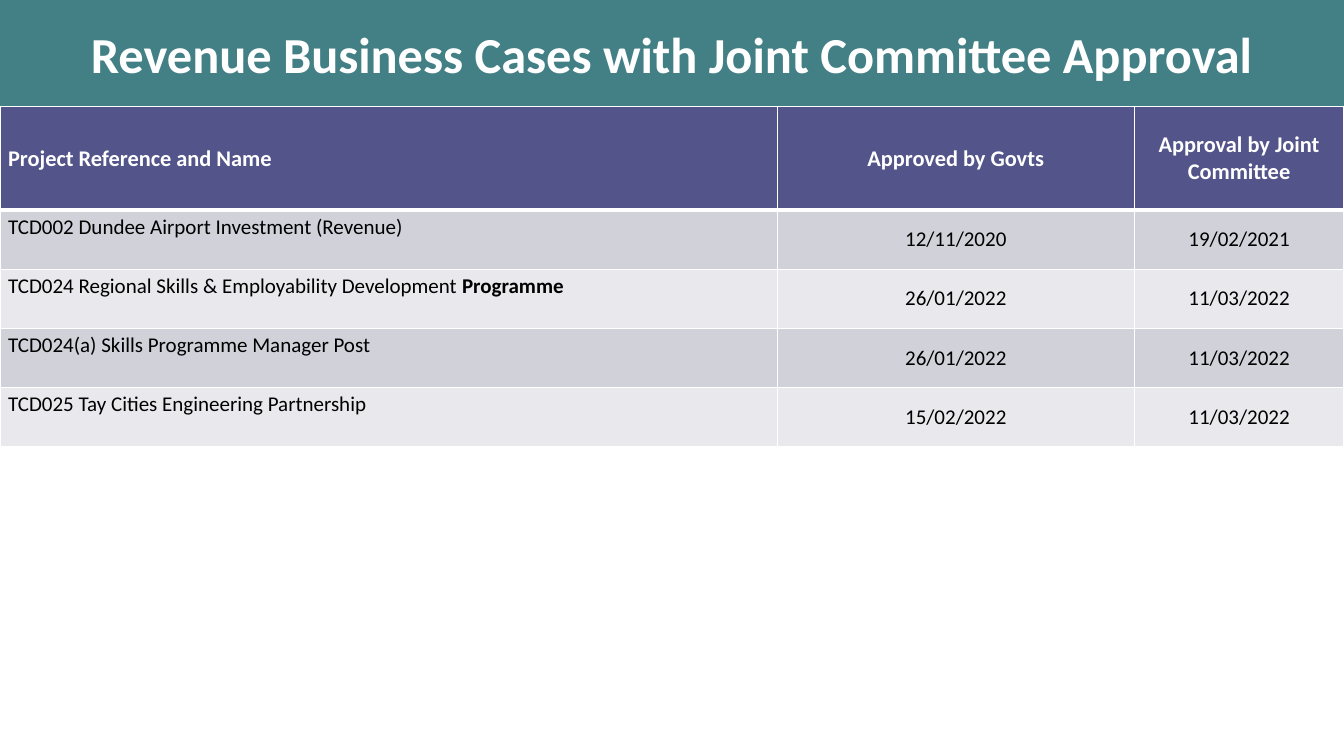
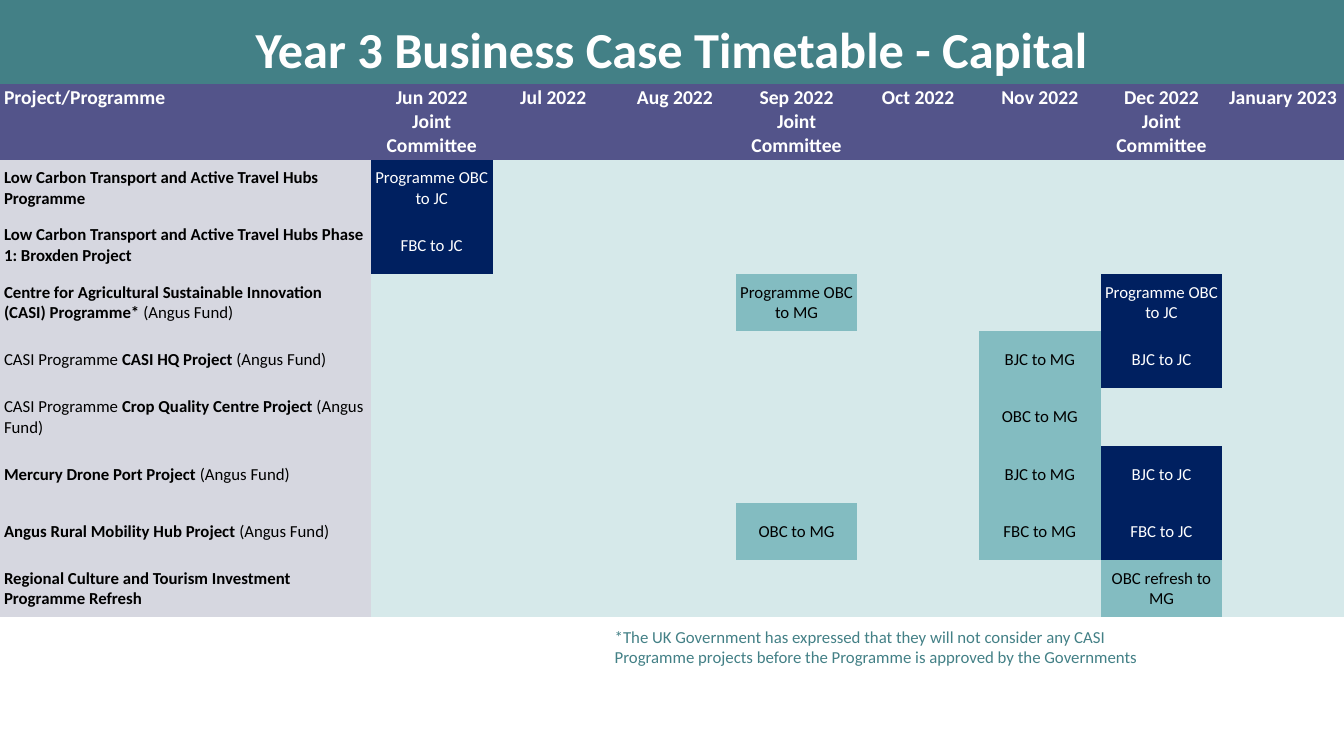
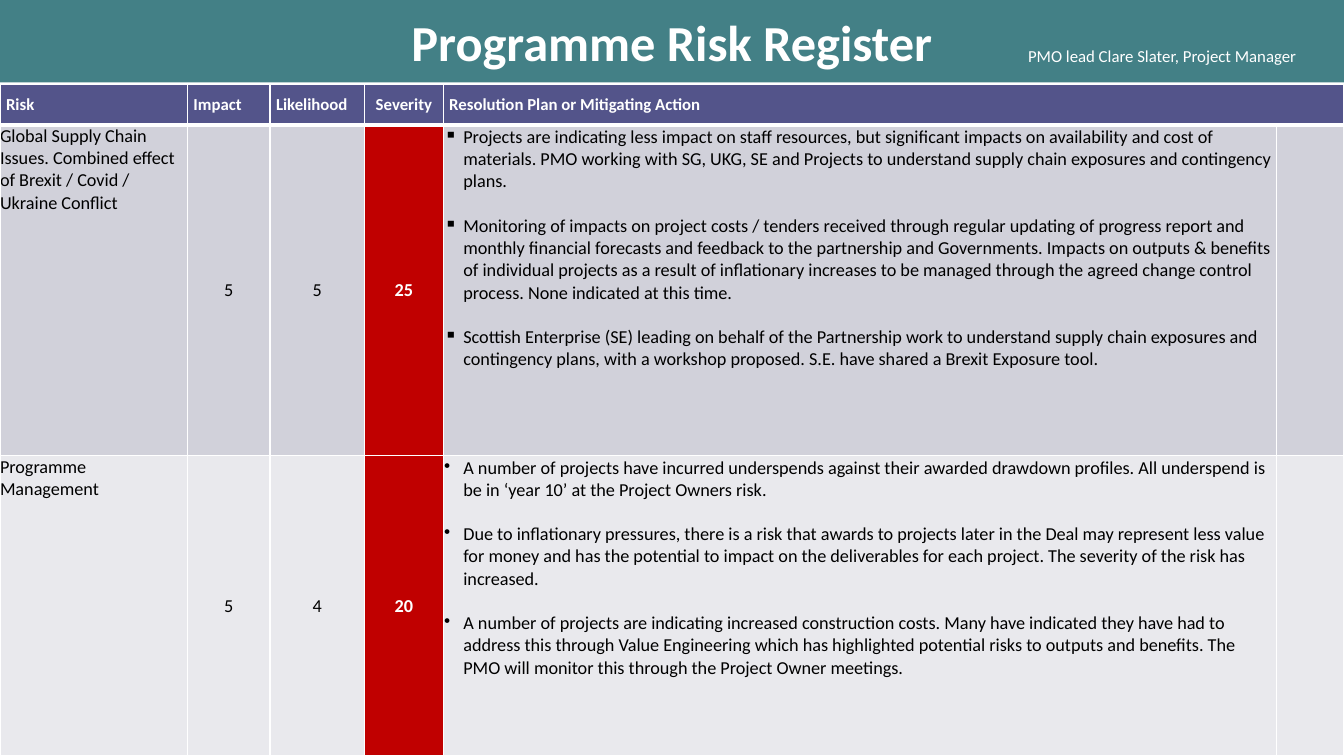
from dataclasses import dataclass, replace
from typing import Optional

from lxml.etree import SubElement
from pptx import Presentation
from pptx.dml.color import RGBColor
from pptx.enum.text import MSO_ANCHOR, MSO_AUTO_SIZE, PP_ALIGN
from pptx.oxml.ns import qn
from pptx.util import Emu, Inches, Pt


@dataclass(frozen=True)
class Theme:
    font: str = "Calibri"
    white: str = "FFFFFF"
    black: str = "000000"
    teal: str = "438086"
    violet: str = "53548A"
    bands: tuple = ("D1D1DA", "E9E9ED")
    label: str = "D6D7E0"
    pale: str = "D6E9EA"
    mint: str = "83BCC1"
    navy: str = "002060"
    red: str = "C00000"
    title: int = 36
    large: int = 16
    text: int = 15
    head: int = 14
    body: int = 13
    small: int = 12


@dataclass(frozen=True)
class Cell:
    """One table cell; a bar in its text switches bold on or off."""
    text: tuple = ()
    fill: str = ""
    color: str = "000000"
    size: int = 12
    bold: bool = False
    align: PP_ALIGN = PP_ALIGN.LEFT
    anchor: MSO_ANCHOR = MSO_ANCHOR.MIDDLE
    inset: tuple = (0.04, 0.02)
    bullet: str = ""
    span: int = 1


@dataclass(frozen=True)
class Grid:
    """A table of full slide width; cols and rows are relative sizes."""
    top: float
    height: float
    cols: tuple
    rows: tuple
    cells: list
    line: float = 0
    rule: float = 0


T = Theme()
MID = PP_ALIGN.CENTER
COLS, ROWS = 160, 90  # slide grid

deck = Presentation()
deck.slide_width, deck.slide_height = Inches(13.33), Inches(7.5)


def wide(cols: float) -> Emu:
    return Emu(int(deck.slide_width * cols / COLS))


def high(rows: float) -> Emu:
    return Emu(int(deck.slide_height * rows / ROWS))


def rgb(color: str) -> RGBColor:
    return RGBColor.from_string(color)


# Text
def write(para, text: str, size: int, color: str, bold: bool = False) -> None:
    for i, part in enumerate(text.split("|")):
        if part:
            run = para.add_run()
            run.text = part
            font = run.font
            font.name, font.size = T.font, Pt(size)
            font.bold = bold or i % 2 == 1
            font.color.rgb = rgb(color)


def bullet(para, mark: str) -> None:
    props = para._p.get_or_add_pPr()
    props.set("marL", str(Inches(0.19)))
    props.set("indent", str(-Inches(0.19)))
    SubElement(props, qn("a:buChar")).set("char", mark)


def note(slide, box: tuple, text: str, color: str) -> None:
    left, top, width, height = box
    shape = slide.shapes.add_textbox(wide(left), high(top), wide(width), high(height))
    shape.text_frame.word_wrap = True
    write(shape.text_frame.paragraphs[0], text, T.small, color)


# Slide with its title band
def page(title: str, height: float):
    slide = deck.slides.add_slide(deck.slide_layouts[5])
    band = slide.shapes.title
    band.left, band.top = Emu(0), Emu(0)
    band.width, band.height = wide(COLS), high(height)
    band.fill.solid()
    band.fill.fore_color.rgb = rgb(T.teal)
    frame = band.text_frame
    frame.auto_size = MSO_AUTO_SIZE.NONE
    frame.vertical_anchor = MSO_ANCHOR.MIDDLE
    frame.paragraphs[0].alignment = MID
    write(frame.paragraphs[0], title, T.title, T.white, True)
    return slide


# Tables
def border(cell, widths: dict) -> None:
    props = cell._tc.get_or_add_tcPr()
    for i, (side, width) in enumerate(widths.items()):
        line = SubElement(props, qn(f"a:ln{side}"))
        props.insert(i, line)
        if width:
            line.set("w", str(Pt(width)))
            fill = SubElement(line, qn("a:solidFill"))
            SubElement(fill, qn("a:srgbClr")).set("val", T.white)
        else:
            SubElement(line, qn("a:noFill"))


def paint(cell, item: Cell) -> None:
    cell.fill.solid()
    cell.fill.fore_color.rgb = rgb(item.fill)
    side, edge = item.inset
    cell.margin_left = cell.margin_right = Inches(side)
    cell.margin_top = cell.margin_bottom = Inches(edge)
    cell.vertical_anchor = item.anchor
    frame = cell.text_frame
    for i, text in enumerate(item.text):
        para = frame.add_paragraph() if i else frame.paragraphs[0]
        para.alignment = item.align
        if item.bullet:
            bullet(para, item.bullet)
            if i:
                para.space_before = Pt(16)
        write(para, text, item.size, item.color, item.bold)


def table(slide, grid: Grid) -> None:
    frame = slide.shapes.add_table(len(grid.rows), len(grid.cols), Emu(0),
                                   high(grid.top), wide(COLS), high(grid.height))
    tab = frame.table
    tab.first_row = tab.horz_banding = False
    for col, size in zip(tab.columns, grid.cols):
        col.width = wide(COLS * size / sum(grid.cols))
    for row, size in zip(tab.rows, grid.rows):
        row.height = high(grid.height * size / sum(grid.rows))
    for r, line in enumerate(grid.cells):
        for c, item in enumerate(line):
            cell = tab.cell(r, c)
            paint(cell, item)
            border(cell, {"L": grid.line, "R": grid.line,
                          "T": grid.rule if r == 1 else grid.line,
                          "B": grid.rule if r == 0 else grid.line})
            if item.span > 1:
                cell.merge(tab.cell(r, c + item.span - 1))


# Approved revenue cases
def cases() -> None:
    slide = page("Revenue Business Cases with Joint Committee Approval", 12.7)
    head = Cell(fill=T.violet, color=T.white, size=T.large, bold=True, inset=(0.08, 0.04))
    names = ("Project Reference and Name", "Approved by Govts", "Approval by Joint Committee")
    cells = [[replace(head, text=(name,), align=MID if c else PP_ALIGN.LEFT)
              for c, name in enumerate(names)]]
    items = (
        ("TCD002 Dundee Airport Investment (Revenue)", "12/11/2020", "19/02/2021"),
        ("TCD024 Regional Skills & Employability Development |Programme|",
         "26/01/2022", "11/03/2022"),
        ("TCD024(a) Skills Programme Manager Post", "26/01/2022", "11/03/2022"),
        ("TCD025 Tay Cities Engineering Partnership", "15/02/2022", "11/03/2022"),
    )
    for r, (name, *dates) in enumerate(items):
        base = Cell(fill=T.bands[r % 2], size=T.text, inset=(0.08, 0.04))
        cells.append([replace(base, text=(name,), anchor=MSO_ANCHOR.TOP)]
                     + [replace(base, text=(date,), align=MID) for date in dates])
    table(slide, Grid(12.7, 40.5, (7.71, 3.54, 2.08), (1.03,) + (0.59,) * 4,
                      cells, line=1, rule=3))


# Capital timetable
def step(text: Optional[str]) -> Cell:
    if not text:
        return Cell(fill=T.pale)
    joint = text.endswith("JC")
    return Cell((text,), T.navy if joint else T.mint,
                T.white if joint else T.black, align=MID)


def times() -> None:
    slide = page("Year 3 Business Case Timetable - Capital", 11.6)
    months = ("Jun 2022", "Jul 2022", "Aug 2022", "Sep 2022",
              "Oct 2022", "Nov 2022", "Dec 2022", "January 2023")
    jun, sep, nov, dec = (months[i] for i in (0, 3, 5, 6))
    head = Cell(fill=T.violet, color=T.white, size=T.head, bold=True, anchor=MSO_ANCHOR.TOP)
    cells = [[replace(head, text=("Project/Programme",))]]
    for month in months:
        extra = ("Joint Committee",) if month in (jun, sep, dec) else ()
        cells[0].append(replace(head, text=(month,) + extra, align=MID))
    plans = (
        ("|Low Carbon Transport and Active Travel Hubs Programme|",
         {jun: "Programme OBC to JC"}),
        ("|Low Carbon Transport and Active Travel Hubs Phase 1: Broxden Project|",
         {jun: "FBC to JC"}),
        ("|Centre for Agricultural Sustainable Innovation (CASI) Programme* |(Angus Fund)",
         {sep: "Programme OBC to MG", dec: "Programme OBC to JC"}),
        ("CASI Programme |CASI HQ Project |(Angus Fund)",
         {nov: "BJC to MG", dec: "BJC to JC"}),
        ("CASI Programme| Crop Quality Centre Project |(Angus Fund)",
         {nov: "OBC to MG"}),
        ("|Mercury Drone Port Project |(Angus Fund)",
         {nov: "BJC to MG", dec: "BJC to JC"}),
        ("|Angus Rural Mobility Hub Project |(Angus Fund)",
         {sep: "OBC to MG", nov: "FBC to MG", dec: "FBC to JC"}),
        ("|Regional Culture and Tourism Investment Programme Refresh|",
         {dec: "OBC refresh to MG"}),
    )
    for name, steps in plans:
        cells.append([Cell((name,), T.label)] + [step(steps.get(m)) for m in months])
    table(slide, Grid(10, 63.5, (3.69,) + (1.21,) * 8, (0.75,) + (0.57,) * 8, cells))
    note(slide, (72, 74, 68.2, 6),
         "*The UK Government has expressed that they will not consider any CASI "
         "Programme projects before the Programme is approved by the Governments", T.teal)


# Risk register
@dataclass(frozen=True)
class Risk:
    name: str
    impact: int
    chance: int
    mark: str
    plan: tuple


RISKS = (
    Risk("Global Supply Chain Issues. Combined effect of Brexit / Covid / Ukraine Conflict",
         5, 5, "▪", (
             "Projects are indicating less impact on staff resources, but significant "
             "impacts on availability and cost of materials. PMO working with SG, UKG, SE "
             "and Projects to understand supply chain exposures and contingency plans.",
             "Monitoring of impacts on project costs / tenders received through regular "
             "updating of progress report and monthly financial forecasts and feedback to "
             "the partnership and Governments. Impacts on outputs & benefits of individual "
             "projects as a result of inflationary increases to be managed through the "
             "agreed change control process. None indicated at this time.",
             "Scottish Enterprise (SE) leading on behalf of the Partnership work to "
             "understand supply chain exposures and contingency plans, with a workshop "
             "proposed. S.E. have shared a Brexit Exposure tool.")),
    Risk("Programme Management", 5, 4, "•", (
        "A number of projects have incurred underspends against their awarded drawdown "
        "profiles. All underspend is be in ‘year 10’ at the Project Owners risk.",
        "Due to inflationary pressures, there is a risk that awards to projects later in "
        "the Deal may represent less value for money and has the potential to impact on "
        "the deliverables for each project. The severity of the risk has increased.",
        "A number of projects are indicating increased construction costs. Many have "
        "indicated they have had to address this through Value Engineering which has "
        "highlighted potential risks to outputs and benefits. The PMO will monitor this "
        "through the Project Owner meetings.")),
)


def risks() -> None:
    slide = page("Programme Risk Register", 9.8)
    head = Cell(fill=T.violet, color=T.white, bold=True, inset=(0.06, 0.03))
    cells = [[replace(head, text=(name,)) for name in ("Risk", "Impact", "Likelihood")]
             + [replace(head, text=("Severity",), align=MID),
                replace(head, text=("Resolution Plan or Mitigating Action",), span=2)]]
    for r, risk in enumerate(RISKS):
        base = Cell(fill=T.bands[r % 2], size=T.body, inset=(0, 0), anchor=MSO_ANCHOR.TOP)
        score = replace(base, align=MID, anchor=MSO_ANCHOR.MIDDLE)
        cells.append([
            replace(base, text=(risk.name,)),
            replace(score, text=(str(risk.impact),)),
            replace(score, text=(str(risk.chance),)),
            replace(score, text=(str(risk.impact * risk.chance),),
                    fill=T.red, color=T.white, bold=True),
            replace(base, text=risk.plan, bullet=risk.mark, inset=(0.01, 0.01)),
            base])
    table(slide, Grid(10, 80, (1.86, 0.82, 0.94, 0.78, 8.27, 0.67), (0.41, 3.28, 2.98),
                      cells, line=1, rule=3))
    note(slide, (121.2, 4.8, 35.2, 3.6), "PMO lead Clare Slater, Project Manager", T.white)


def main() -> None:
    cases()
    times()
    risks()
    deck.save("out.pptx")


if __name__ == "__main__":
    main()
